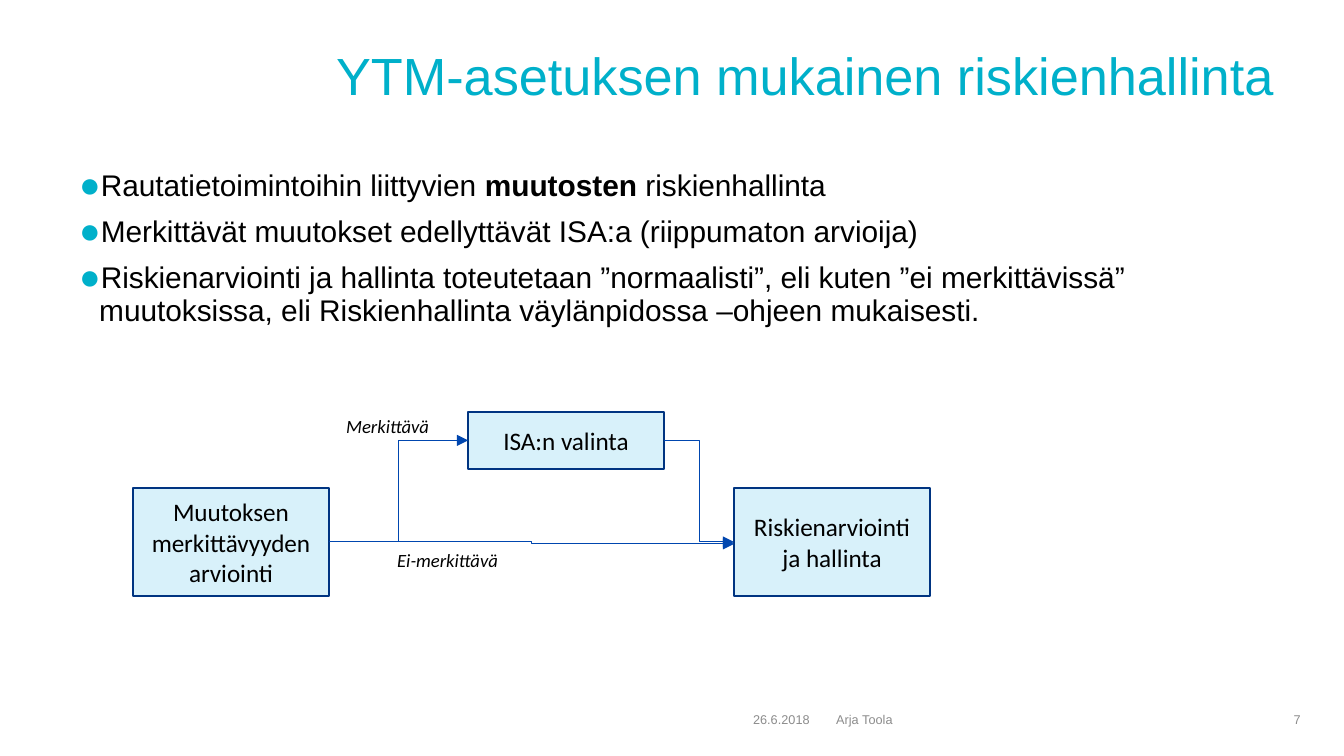
"""Build the slide on risk management under the YTM regulation."""
from dataclasses import dataclass

import lxml.etree
import pptx
import pptx.dml.color
import pptx.enum.shapes
import pptx.enum.text
import pptx.oxml.ns
import pptx.util

EMU_PER_PX = 914400 / 134.4
COLORS = {
    "accent": "00B0CA",
    "text": "000000",
    "footer": "8C8C8C",
    "fill": "D8F1FA",
    "border": "003481",
    "arrow": "0046AF",
}
ALIGN = pptx.enum.text.PP_ALIGN
ANCHOR = pptx.enum.text.MSO_ANCHOR


@dataclass
class Area:
    left: int
    top: int
    width: int
    height: int


@dataclass
class Label:
    text: str
    area: Area
    size: float
    color: str = "text"
    font: str = "Arial"
    align: ALIGN = ALIGN.LEFT
    anchor: ANCHOR = ANCHOR.MIDDLE
    italic: bool = False
    wrap: bool = True
    line_spacing: float = 1.0


@dataclass
class Step:
    name: str
    text: str
    area: Area


@dataclass
class Link:
    start: str
    end: str
    drop: int = 0


STEP_WIDTH, STEP_HEIGHT, STEP_TOP = 196, 108, 488
STEPS = [
    Step("assessment", "Muutoksen merkittävyyden arviointi", Area(133, STEP_TOP, STEP_WIDTH, STEP_HEIGHT)),
    Step("management", "Riskienarviointi ja hallinta", Area(734, STEP_TOP, STEP_WIDTH, STEP_HEIGHT)),
    Step("assessor", "ISA:n valinta", Area(468, 412, STEP_WIDTH, 57)),
]
LINKS = [
    Link("assessment", "assessor"),
    Link("assessment", "management", drop=2),
    Link("assessor", "management"),
]
TITLE = Label("YTM-asetuksen mukainen riskienhallinta", Area(323, 45, 973, 68), 28, "accent", line_spacing=0.9)
FOOTERS = [
    Label("26.6.2018", Area(701, 700, 122, 40), 6.8, "footer", align=ALIGN.RIGHT),
    Label("Arja Toola", Area(823, 700, 429, 40), 6.8, "footer"),
    Label("7", Area(1259, 700, 55, 40), 6.8, "footer", align=ALIGN.RIGHT),
]
BRANCHES = [
    Label(text, area, 10, font="Calibri", anchor=ANCHOR.TOP, italic=True, wrap=False)
    for text, area in [
        ("Ei-merkittävä", Area(384, 542, 129, 36)),
        ("Merkittävä", Area(333, 408, 112, 36)),
    ]
]
BODY_AREA = Area(66, 164, 1172, 486)
BULLETS = [
    ["Rautatietoimintoihin liittyvien ", "muutosten", " riskienhallinta"],
    ["Merkittävät muutokset edellyttävät ISA:a (riippumaton arvioija)"],
    ["Riskienarviointi ja hallinta toteutetaan ”normaalisti”, eli kuten ”ei merkittävissä” "
     "muutoksissa, eli Riskienhallinta väylänpidossa –ohjeen mukaisesti."],
]
BOLD_SPAN = "muutosten"


def emu(px: int) -> int:
    """Turn pixels into EMU."""
    return round(px * EMU_PER_PX)


def place(area: Area) -> list[int]:
    """Return left, top, width and height in EMU."""
    return [emu(px) for px in (area.left, area.top, area.width, area.height)]


def rgb(name: str) -> pptx.dml.color.RGBColor:
    """Look up a named colour."""
    return pptx.dml.color.RGBColor.from_string(COLORS[name])


def style(font, name: str, size: float, color: str) -> None:
    """Set typeface, size and colour."""
    font.name = name
    font.size = pptx.util.Pt(size)
    font.color.rgb = rgb(color)


def add_child(parent, tag: str, **attributes: str):
    """Append a DrawingML element."""
    return lxml.etree.SubElement(parent, pptx.oxml.ns.qn(tag), attributes)


def draw_label(page, label: Label) -> None:
    """Draw one text box with a single paragraph."""
    box = page.shapes.add_textbox(*place(label.area))
    frame = box.text_frame
    frame.word_wrap = label.wrap
    frame.vertical_anchor = label.anchor
    if not label.wrap:
        frame.auto_size = pptx.enum.text.MSO_AUTO_SIZE.SHAPE_TO_FIT_TEXT
    frame.text = label.text
    paragraph = frame.paragraphs[0]
    paragraph.alignment = label.align
    paragraph.line_spacing = label.line_spacing
    span = paragraph.runs[0]
    style(span.font, label.font, label.size, label.color)
    span.font.italic = label.italic


def draw_bullets(page) -> None:
    """Draw the bulleted body text."""
    frame = page.shapes.add_textbox(*place(BODY_AREA)).text_frame
    frame.word_wrap = True
    for index, spans in enumerate(BULLETS):
        paragraph = frame.add_paragraph() if index else frame.paragraphs[0]
        properties = paragraph._p.get_or_add_pPr()
        properties.set("marL", str(emu(20)))
        properties.set("indent", str(emu(-20)))
        add_child(add_child(properties, "a:buClr"), "a:srgbClr", val=COLORS["accent"])
        add_child(properties, "a:buSzPct", val="120000")
        add_child(properties, "a:buFont", typeface="Arial")
        add_child(properties, "a:buChar", char="●")
        paragraph.line_spacing = 0.9
        paragraph.space_before = pptx.util.Pt(7.5 if index else 0)
        for text in spans:
            span = paragraph.add_run()
            span.text = text
            style(span.font, "Arial", 16, "text")
            span.font.bold = text == BOLD_SPAN


def draw_step(page, step: Step):
    """Draw one process box and return it."""
    box = page.shapes.add_shape(pptx.enum.shapes.MSO_SHAPE.RECTANGLE, *place(step.area))
    box.shadow.inherit = False
    box.fill.solid()
    box.fill.fore_color.rgb = rgb("fill")
    box.line.color.rgb = rgb("border")
    box.line.width = pptx.util.Pt(1)
    frame = box.text_frame
    frame.word_wrap = True
    frame.vertical_anchor = ANCHOR.MIDDLE
    frame.text = step.text
    paragraph = frame.paragraphs[0]
    paragraph.alignment = ALIGN.CENTER
    style(paragraph.runs[0].font, "Calibri", 13.5, "text")
    return box


def draw_link(page, link: Link, boxes: dict) -> None:
    """Draw an elbow arrow from one box's right side to another's left side."""
    start, end = boxes[link.start], boxes[link.end]
    arrow = page.shapes.add_connector(
        pptx.enum.shapes.MSO_CONNECTOR.ELBOW,
        start.left + start.width, start.top + start.height // 2,
        end.left, end.top + end.height // 2 + emu(link.drop),
    )
    arrow.begin_connect(start, 3)
    if not link.drop:
        arrow.end_connect(end, 1)
    arrow.line.color.rgb = rgb("arrow")
    arrow.line.width = pptx.util.Pt(0.5)
    add_child(arrow.line._get_or_add_ln(), "a:tailEnd", type="triangle")
    add_child(arrow._element.spPr, "a:effectLst")


def main() -> None:
    """Assemble and save the deck."""
    deck = pptx.Presentation()
    deck.slide_width, deck.slide_height = emu(1344), emu(756)
    page = deck.slides.add_slide(deck.slide_layouts[6])
    draw_label(page, TITLE)
    draw_bullets(page)
    for label in FOOTERS:
        draw_label(page, label)
    boxes = {step.name: draw_step(page, step) for step in STEPS}
    for link in LINKS:
        draw_link(page, link, boxes)
    for label in BRANCHES:
        draw_label(page, label)
    deck.save("out.pptx")


if __name__ == "__main__":
    main()
